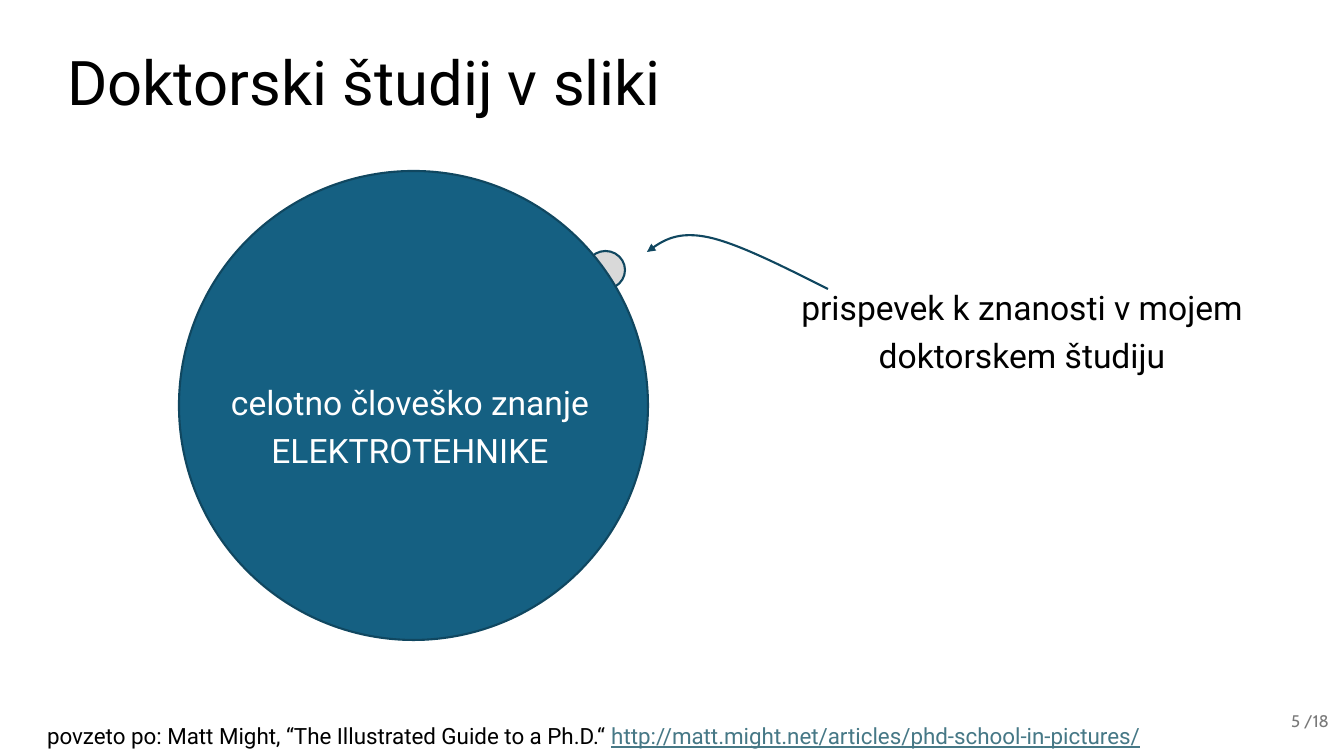
"""Build the slide that shows doctoral study as a bump on a circle of knowledge."""
import pptx
import pptx.util
import pptx.dml.color
import pptx.enum.shapes
import pptx.enum.text
import pptx.oxml

TITLE = "Doktorski študij v sliki"
SOURCE = [
    ("povzeto po: Matt Might, “The Illustrated Guide to a Ph.D.“ ", {}),
    ("http://matt.might.net/articles/phd-school-in-pictures/",
     {"color": "467886", "underline": True}),
]
KNOWLEDGE = "celotno človeško znanje ELEKTROTEHNIKE"
CONTRIBUTION = "prispevek k znanosti v mojem doktorskem študiju"
PAGE_NUMBER = "5 /18"

CIRCLES = [((586, 251, 39, 38), "D9D9D9"), ((179, 171, 469, 469), "156082")]
ARROW_CURVES = [
    ((647, 252), (662, 241), (676, 231), (707, 237)),
    ((707, 237), (737, 243), (782, 266), (828, 289)),
]
CURVE_STEPS = 24
OUTLINE = "104760"
PX = 914400 / 100.8
ALIGN = pptx.enum.text.PP_ALIGN
ANCHOR = pptx.enum.text.MSO_ANCHOR


def emu(pixels):
    return pptx.util.Emu(round(pixels * PX))


def rgb(code):
    return pptx.dml.color.RGBColor.from_string(code)


def place(shape, bounds):
    shape.left, shape.top, shape.width, shape.height = map(emu, bounds)


def write(box, text, size=24, font="Roboto", color="000000", align=ALIGN.LEFT,
          anchor=ANCHOR.TOP, spacing=1.2, bullet=True):
    frame = box.text_frame
    frame.word_wrap = True
    frame.auto_size = pptx.enum.text.MSO_AUTO_SIZE.NONE
    frame.vertical_anchor = anchor
    para = frame.paragraphs[0]
    if not bullet:
        properties = para._p.get_or_add_pPr()
        properties.set("marL", "0")
        properties.set("indent", "0")
        properties.append(properties.makeelement(pptx.oxml.ns.qn("a:buNone"), {}))
    para.alignment = align
    para.line_spacing = spacing
    para.space_before = pptx.util.Pt(0)
    for words, style in [(text, {})] if isinstance(text, str) else text:
        span = para.add_run()
        span.text = words
        span.font.name = font
        span.font.size = pptx.util.Pt(size)
        span.font.color.rgb = rgb(style.get("color", color))
        span.font.underline = style.get("underline")


def add_label(page, bounds, text, **style):
    write(page.shapes.add_textbox(*map(emu, bounds)), text, **style)


def outline(shape):
    shape.shadow.inherit = False
    shape.line.color.rgb = rgb(OUTLINE)
    shape.line.width = pptx.util.Pt(1.5)


def add_circle(page, bounds, fill):
    circle = page.shapes.add_shape(pptx.enum.shapes.MSO_SHAPE.OVAL, *map(emu, bounds))
    circle.fill.solid()
    circle.fill.fore_color.rgb = rgb(fill)
    outline(circle)


def curve_point(curve, t):
    weights = ((1 - t) ** 3, 3 * t * (1 - t) ** 2, 3 * t * t * (1 - t), t ** 3)
    return tuple(emu(sum(w * value for w, value in zip(weights, axis)))
                 for axis in zip(*curve))


def add_arrow(page):
    points = [curve_point(curve, step / CURVE_STEPS)
              for curve in ARROW_CURVES for step in range(1, CURVE_STEPS + 1)]
    builder = page.shapes.build_freeform(*map(emu, ARROW_CURVES[0][0]))
    builder.add_line_segments(points, close=False)
    arrow = builder.convert_to_shape()
    arrow.fill.background()
    outline(arrow)
    line = arrow.line._get_or_add_ln()
    line.append(line.makeelement(pptx.oxml.ns.qn("a:headEnd"), {"type": "triangle"}))


def main():
    deck = pptx.Presentation()
    deck.slide_width, deck.slide_height = emu(1344), emu(756)
    page = deck.slides.add_slide(deck.slide_layouts[1])
    title, source = page.placeholders
    place(title, (57, 13, 954, 146))
    write(title, TITLE, size=44, anchor=ANCHOR.MIDDLE, spacing=0.9)
    place(source, (37, 712, 1278, 41))
    write(source, SOURCE, size=16, bullet=False)
    for bounds, fill in CIRCLES:
        add_circle(page, bounds, fill)
    add_label(page, (204, 369, 412, 67), KNOWLEDGE, color="FFFFFF", align=ALIGN.CENTER)
    add_label(page, (788, 274, 468, 135), CONTRIBUTION, align=ALIGN.CENTER)
    add_arrow(page)
    add_label(page, (1037, 701, 302, 40), PAGE_NUMBER, size=12, font="Cabin",
              color="797979", align=ALIGN.RIGHT, anchor=ANCHOR.MIDDLE, spacing=1.0)
    deck.save("out.pptx")


if __name__ == "__main__":
    main()
